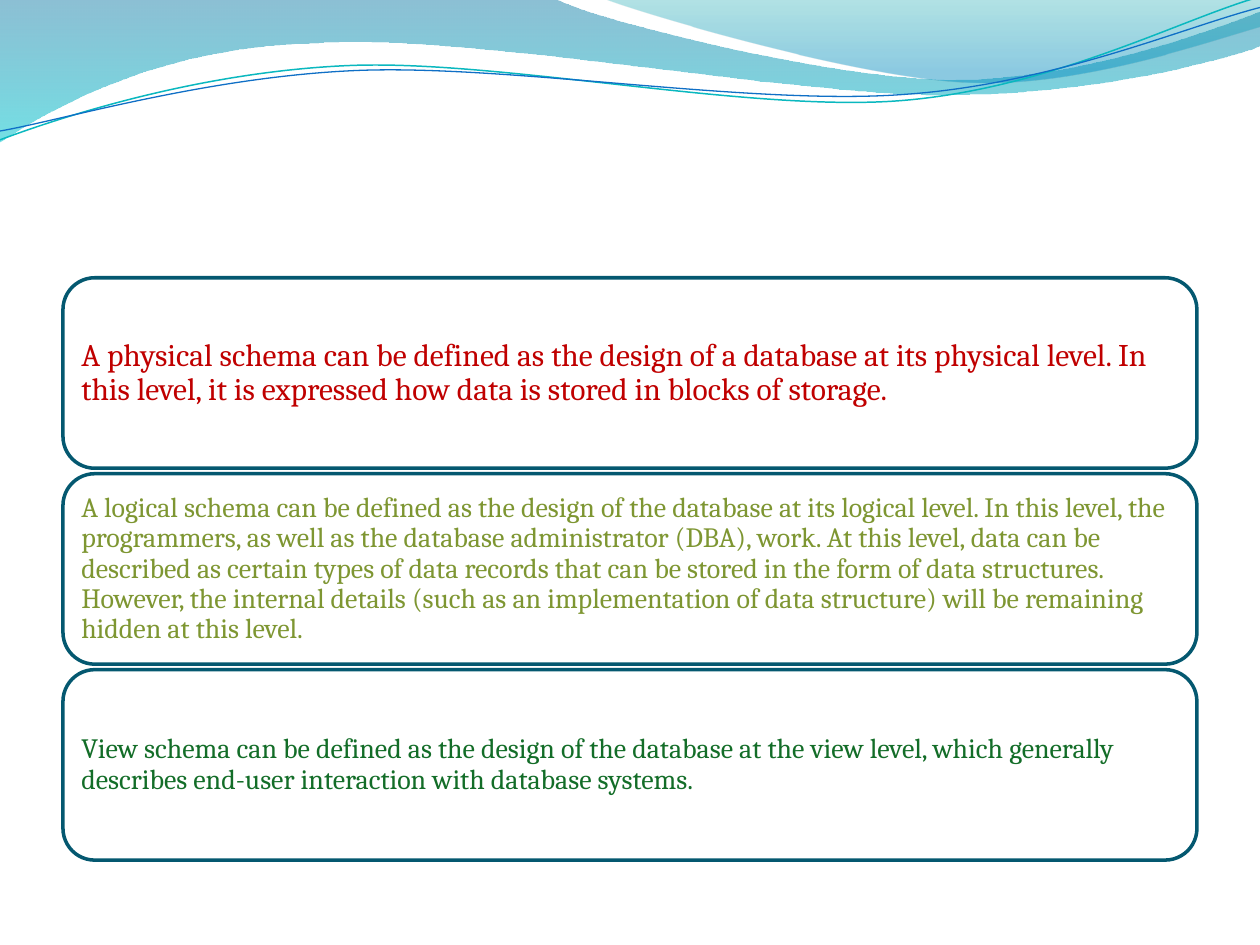
from math import cos, radians, sin

from lxml import etree
from pptx import Presentation
from pptx.dml.color import RGBColor
from pptx.enum.shapes import MSO_SHAPE
from pptx.enum.text import MSO_ANCHOR, PP_ALIGN
from pptx.oxml.ns import qn
from pptx.util import Cm, Pt

ROUNDED = MSO_SHAPE.ROUNDED_RECTANGLE
MIDDLE = MSO_ANCHOR.MIDDLE
LEFT = PP_ALIGN.LEFT
TILT = 2.7
COLORS = {
    "wave_blue": "0074A1", "wave_cyan": "00C6CF",
    "crest_teal": "00A1A9", "crest_blue": "008BBF",
    "line_teal": "0AB8BF", "line_blue": "0F6FC6",
    "white": "FFFFFF", "border": "045870",
    "red": "C00000", "olive": "7E9632", "green": "136D28",
}


def rgb(name):
    return RGBColor.from_string(COLORS[name])


def add_curve(shapes, start, segments, closed, tilt=0, center=(0, 0)):
    values = start + sum(segments, ())
    turn = radians(tilt)
    lengths = []
    for x, y in zip(values[::2], values[1::2]):
        dx, dy = x - center[0], y - center[1]
        lengths.append((Cm((center[0] + dx * cos(turn) - dy * sin(turn)) * 2.54),
                        Cm((center[1] + dx * sin(turn) + dy * cos(turn)) * 2.54)))
    builder = shapes.build_freeform(*lengths[0])
    builder.add_line_segments(lengths[1:], close=closed)
    shape = builder.convert_to_shape()
    shape.shadow.inherit = False
    shape.rotation = -tilt
    vertices = iter(list(shape.element.spPr.iter(qn("a:lnTo"))))
    for segment in segments:
        vertex = next(vertices)
        if len(segment) == 6:
            vertex.addprevious(etree.Element(qn("a:cubicBezTo")))
            curve = vertex.getprevious()
            for corner in (vertex, next(vertices), next(vertices)):
                curve.append(corner[0])
                corner.getparent().remove(corner)
    return shape


presentation = Presentation()
presentation.slide_width = Cm(25.4)
presentation.slide_height = Cm(19.05)
slide = presentation.slides.add_slide(presentation.slide_layouts[6])
slide.background.fill.solid()
slide.background.fill.fore_color.rgb = rgb("white")

waves = [
    ((0, 0),
     [(4.4, -0.01), (4.76, 0.17, 6.64, 0.63, 7.58, 0.63), (8.53, 0.63, 9.58, 0.26, 10, 0.09),
      (10.01, 0.36), (9.83, 0.44, 8.7, 0.76, 7.46, 0.75), (6.22, 0.75, 3.82, 0.28, 2.57, 0.34),
      (1.29, 0.36, 0.46, 0.83, -0.01, 1.13), (0, 0)],
     [(0, "wave_blue", 45), (1, "wave_cyan", 55)]),
    ((4.79, -0.01),
     [(5.09, 0.11, 6.82, 0.62, 7.69, 0.65), (8.56, 0.69, 9.61, 0.32, 10, 0.21), (10, 0),
      (4.79, -0.01)],
     [(0, "crest_teal", 30), (0.8, "crest_blue", 45)]),
]
for start, segments, stops in waves:
    wave = add_curve(slide.shapes, start, segments, True)
    wave.line.fill.background()
    wave.fill.gradient()
    wave.fill.gradient_angle = 270
    for stop, (position, color, _) in zip(wave.fill.gradient_stops, stops):
        stop.position = position
        stop.color.rgb = rgb(color)
    for element, (_, _, opacity) in zip(wave.element.spPr.iter(qn("a:srgbClr")), stops):
        etree.SubElement(element, qn("a:alpha")).set("val", str(opacity * 1000))

wave_lines = [
    ((0, 1.11),
     [(0.48, 0.93, 1.58, 0.57, 2.77, 0.52), (3.95, 0.47, 5.93, 0.89, 7.13, 0.8),
      (8.33, 0.71, 9.38, 0.15, 9.98, -0.02)],
     (4.99, 0.58), "line_teal", 0.85),
    ((0, 1.04),
     [(0.47, 0.96, 1.64, 0.61, 2.83, 0.56), (4.03, 0.51, 5.97, 0.84, 7.17, 0.75),
      (8.36, 0.67, 9.41, 0.21, 10, 0.06)],
     (5, 0.59), "line_blue", 0.75),
]
for start, segments, center, color, width in wave_lines:
    wave_line = add_curve(slide.shapes, start, segments, False, TILT, center)
    wave_line.fill.background()
    wave_line.line.color.rgb = rgb(color)
    wave_line.line.width = Pt(width)

schemas = [
    ("A physical schema can be defined as the design of a database at its physical level. "
     "In this level, it is expressed how data is stored in blocks of storage.", 18, "red"),
    ("A logical schema can be defined as the design of the database at its logical level. "
     "In this level, the programmers, as well as the database administrator (DBA), work. "
     "At this level, data can be described as certain types of data records that can be "
     "stored in the form of data structures. However, the internal details (such as an "
     "implementation of data structure) will be remaining hidden at this level.", 16, "olive"),
    ("View schema can be defined as the design of the database at the view level, which "
     "generally describes end-user interaction with database systems.", 16, "green"),
]
for index, (text, size, color) in enumerate(schemas):
    top = 5.6 + 3.95 * index
    card = slide.shapes.add_shape(ROUNDED, Cm(1.27), Cm(top), Cm(22.86), Cm(3.84))
    card.shadow.inherit = False
    card.fill.solid()
    card.fill.fore_color.rgb = rgb("white")
    card.line.color.rgb = rgb("border")
    card.line.width = Pt(2)
    label = slide.shapes.add_textbox(Cm(1.46), Cm(top + 0.19), Cm(22.48), Cm(3.46))
    frame = label.text_frame
    frame.word_wrap = True
    frame.vertical_anchor = MIDDLE
    frame.margin_left = frame.margin_right = Cm(0.18)
    frame.margin_top = frame.margin_bottom = Cm(0.18)
    paragraph = frame.paragraphs[0]
    paragraph.text = text
    paragraph.alignment = LEFT
    paragraph.line_spacing = 0.9
    paragraph.font.name = "Cambria"
    paragraph.font.size = Pt(size)
    paragraph.font.color.rgb = rgb(color)

presentation.save("out.pptx")
